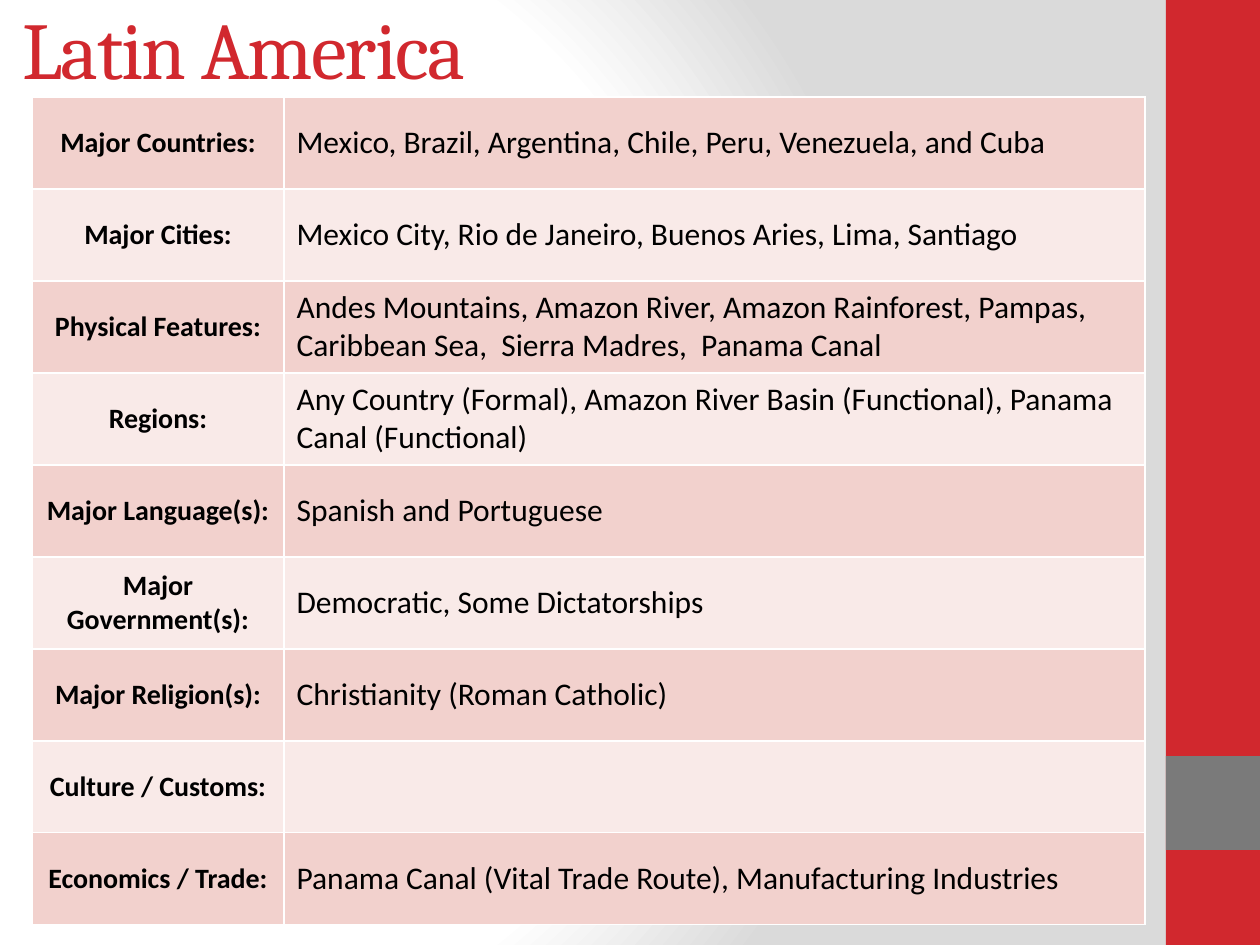
import dataclasses

import pptx
import pptx.dml.color
import pptx.enum.shapes
import pptx.enum.text
import pptx.oxml
import pptx.oxml.ns
import pptx.util
from lxml import etree

PX = 914400 / 126
ALIGN = pptx.enum.text.PP_ALIGN
MIDDLE = pptx.enum.text.MSO_ANCHOR.MIDDLE


@dataclasses.dataclass
class Theme:
    red: str = "D1282E"
    grey: str = "7A7A7A"
    white: str = "FFFFFF"
    shade: str = "DADADA"
    black: str = "000000"
    bands: tuple = ("F2D1CD", "F9EAE8")
    heading_font: str = "Cambria"
    body_font: str = "Calibri"
    heading_size: int = 46
    label_size: int = 16
    detail_size: int = 18
    border_width: int = 1


def px(length):
    return pptx.util.Emu(round(length * PX))


def rgb(value):
    return pptx.dml.color.RGBColor.from_string(value)


class SlideBuilder:
    def __init__(self, slide, theme):
        self.slide = slide
        self.theme = theme

    def background(self):
        self.slide.background.fill.gradient()
        gradient = self.slide.element.xpath(".//p:bg//a:gradFill")[0]
        for part in list(gradient):
            gradient.remove(part)
        stops = etree.SubElement(gradient, pptx.oxml.ns.qn("a:gsLst"))
        for percent, color in (
            (0, self.theme.white),
            (75, self.theme.white),
            (100, self.theme.shade),
        ):
            stop = etree.SubElement(
                stops, pptx.oxml.ns.qn("a:gs"), pos=str(percent * 1000)
            )
            etree.SubElement(stop, pptx.oxml.ns.qn("a:srgbClr"), val=color)
        circle = etree.SubElement(
            gradient, pptx.oxml.ns.qn("a:path"), path="circle"
        )
        etree.SubElement(
            circle, pptx.oxml.ns.qn("a:fillToRect"),
            l="20000", t="50000", r="100000", b="50000",
        )

    def block(self, left, top, width, height, color):
        block = self.slide.shapes.add_shape(
            pptx.enum.shapes.MSO_SHAPE.RECTANGLE,
            px(left), px(top), px(width), px(height),
        )
        block.shadow.inherit = False
        block.fill.solid()
        block.fill.fore_color.rgb = rgb(color)
        block.line.fill.background()

    def style_run(self, run, font, size, color, bold=False):
        run.font.name = font
        run.font.size = pptx.util.Pt(size)
        run.font.color.rgb = rgb(color)
        run.font.bold = bold

    def title(self, left, top, width, height, text):
        frame = self.slide.shapes.add_textbox(
            px(left), px(top), px(width), px(height)
        ).text_frame
        frame.word_wrap = True
        frame.vertical_anchor = MIDDLE
        frame.text = text
        run = frame.paragraphs[0].runs[0]
        self.style_run(
            run, self.theme.heading_font, self.theme.heading_size, self.theme.red
        )
        run.font._element.set("spc", "-100")

    def border(self, cell):
        properties = cell._tc.get_or_add_tcPr()
        width = pptx.util.Pt(self.theme.border_width)
        for position, side in enumerate(("lnL", "lnR", "lnT", "lnB")):
            line = pptx.oxml.parse_xml(
                f'<a:{side} {pptx.oxml.ns.nsdecls("a")} w="{width}"><a:solidFill>'
                f'<a:srgbClr val="{self.theme.white}"/></a:solidFill></a:{side}>'
            )
            properties.insert(position, line)

    def cell(self, cell, text, fill, size, bold, alignment):
        cell.fill.solid()
        cell.fill.fore_color.rgb = rgb(fill)
        cell.vertical_anchor = MIDDLE
        cell.text_frame.text = text
        paragraph = cell.text_frame.paragraphs[0]
        paragraph.alignment = alignment
        for run in paragraph.runs:
            self.style_run(run, self.theme.body_font, size, self.theme.black, bold)
        self.border(cell)

    def table(self, left, top, widths, row_height, facts):
        table = self.slide.shapes.add_table(
            len(facts), len(widths), px(left), px(top),
            px(sum(widths)), px(row_height * len(facts)),
        ).table
        table.first_row = False
        table.horz_banding = False
        for column, width in zip(table.columns, widths):
            column.width = px(width)
        for index, (label, detail) in enumerate(facts):
            table.rows[index].height = px(row_height)
            band = self.theme.bands[index % 2]
            self.cell(table.cell(index, 0), label, band,
                      self.theme.label_size, True, ALIGN.CENTER)
            self.cell(table.cell(index, 1), detail, band,
                      self.theme.detail_size, False, ALIGN.LEFT)


FACTS = [
    ("Major Countries:",
     "Mexico, Brazil, Argentina, Chile, Peru, Venezuela, and Cuba"),
    ("Major Cities:",
     "Mexico City, Rio de Janeiro, Buenos Aries, Lima, Santiago"),
    ("Physical Features:",
     "Andes Mountains, Amazon River, Amazon Rainforest, Pampas, "
     "Caribbean Sea,  Sierra Madres,  Panama Canal"),
    ("Regions:",
     "Any Country (Formal), Amazon River Basin (Functional), "
     "Panama Canal (Functional)"),
    ("Major Language(s):", "Spanish and Portuguese"),
    ("Major Government(s):", "Democratic, Some Dictatorships"),
    ("Major Religion(s):", "Christianity (Roman Catholic)"),
    ("Culture / Customs:", ""),
    ("Economics / Trade:",
     "Panama Canal (Vital Trade Route), Manufacturing Industries"),
]


def main():
    presentation = pptx.Presentation()
    presentation.slide_width = px(1260)
    presentation.slide_height = px(945)
    theme = Theme()
    slide = presentation.slides.add_slide(presentation.slide_layouts[6])
    builder = SlideBuilder(slide, theme)
    builder.background()
    builder.block(1166, 0, 94, 945, theme.red)
    builder.block(1166, 756, 94, 94, theme.grey)
    builder.title(10, -32, 1050, 158, "Latin America")
    builder.table(32, 97, (252, 861), 92, FACTS)
    presentation.save("out.pptx")


if __name__ == "__main__":
    main()
